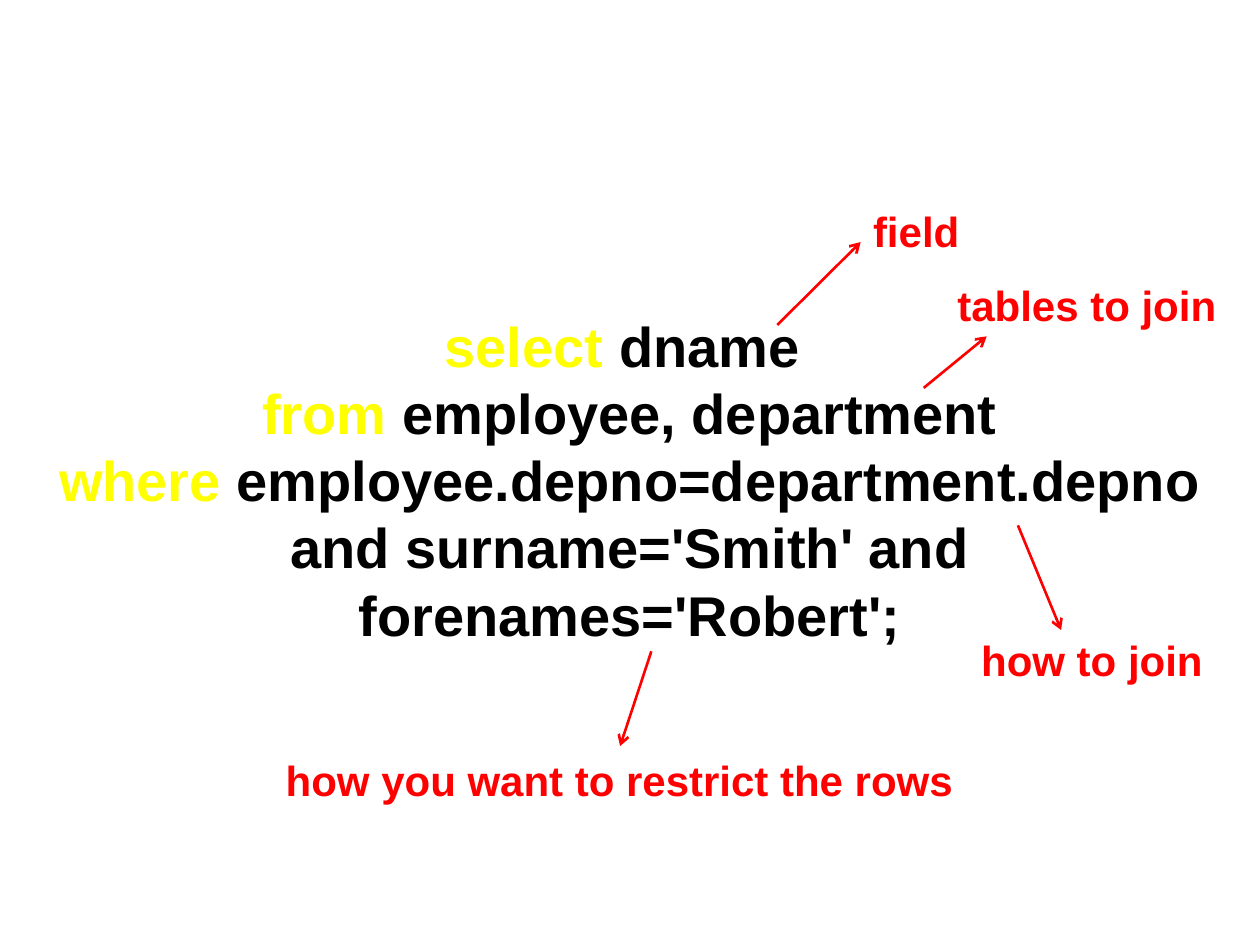
import pptx
import pptx.dml.color
import pptx.enum.shapes
import pptx.enum.text
import pptx.oxml.ns
import pptx.util
from lxml import etree
from pptx.util import Cm

COLOURS = {"keyword": "FFFF00", "code": "000000", "note": "FF0000"}
FONT = "Arial"

# Each paragraph is a list of lines; each line is a keyword and the code after it
QUERY = [
    [("select", " dname ")],
    [
        ("from", " employee, department"),
        ("where", " employee.depno=department.depno and surname='Smith' and forenames='Robert';"),
    ],
]

# Text, then left, top, width and height in cm
NOTES = [
    ("field", 17.35, 4.01, 2.26, 1.3),
    ("tables to join", 19.05, 5.51, 5.77, 1.3),
    ("how to join", 19.53, 12.67, 5.0, 1.3),
    ("how you want to restrict the rows", 5.51, 15.09, 14.1, 1.27),
]

# Start x, y and end x, y in cm
ARROWS = [
    (15.67, 6.55, 17.35, 4.88),
    (18.62, 7.82, 19.89, 6.78),
    (20.52, 10.59, 21.39, 12.7),
    (13.13, 13.13, 12.5, 15.04),
]


def colour(name):
    return pptx.dml.color.RGBColor.from_string(COLOURS[name])


def add_text_frame(slide, position, wrap):
    shape = slide.shapes.add_textbox(*map(Cm, position))
    text_frame = shape.text_frame
    text_frame.word_wrap = wrap
    text_frame.auto_size = pptx.enum.text.MSO_AUTO_SIZE.SHAPE_TO_FIT_TEXT
    return text_frame


def set_font(paragraph, size):
    paragraph.font.name = FONT
    paragraph.font.size = pptx.util.Pt(size)
    paragraph.font.bold = True


def add_run(paragraph, text, colour_name):
    run = paragraph.add_run()
    run.text = text
    run.font.color.rgb = colour(colour_name)


def add_query(slide):
    text_frame = add_text_frame(slide, (0.84, 6.15, 23.72, 7.09), True)
    for index, lines in enumerate(QUERY):
        paragraph = text_frame.add_paragraph() if index else text_frame.paragraphs[0]
        paragraph.alignment = pptx.enum.text.PP_ALIGN.CENTER
        set_font(paragraph, 32)
        for line_index, (keyword, code) in enumerate(lines):
            if line_index:
                paragraph.add_line_break()
            add_run(paragraph, keyword, "keyword")
            add_run(paragraph, code, "code")


def add_note(slide, text, *position):
    paragraph = add_text_frame(slide, position, False).paragraphs[0]
    paragraph.text = text
    set_font(paragraph, 24)
    paragraph.font.color.rgb = colour("note")


def add_arrow(slide, *ends):
    connector = slide.shapes.add_connector(
        pptx.enum.shapes.MSO_CONNECTOR.STRAIGHT, *map(Cm, ends))
    connector.line.color.rgb = colour("note")
    connector.line.width = pptx.util.Pt(1.5)
    properties = connector.element.spPr
    line = properties.find(pptx.oxml.ns.qn("a:ln"))
    etree.SubElement(line, pptx.oxml.ns.qn("a:tailEnd"), type="arrow")
    etree.SubElement(properties, pptx.oxml.ns.qn("a:effectLst"))


def main():
    presentation = pptx.Presentation()
    presentation.slide_width = Cm(25.4)
    presentation.slide_height = Cm(19.05)
    slide = presentation.slides.add_slide(presentation.slide_layouts[6])

    # SQL statement
    add_query(slide)

    # Notes around it, and arrows that lead to them
    for note in NOTES:
        add_note(slide, *note)
    for arrow in ARROWS:
        add_arrow(slide, *arrow)

    presentation.save("out.pptx")


if __name__ == "__main__":
    main()
